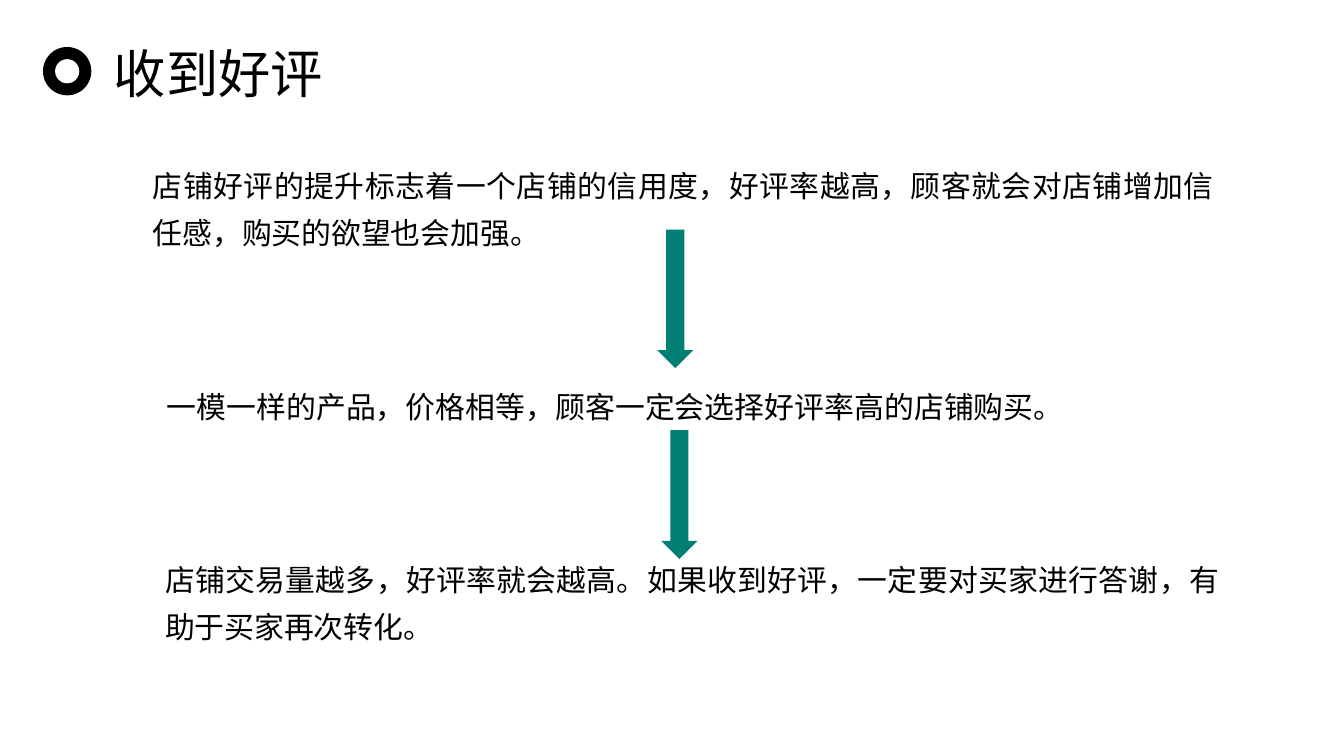
from dataclasses import dataclass

import pptx
import pptx.dml.color
import pptx.enum.shapes
import pptx.enum.text
import pptx.oxml.ns
import pptx.util
from lxml import etree

Inches = pptx.util.Inches
RGBColor = pptx.dml.color.RGBColor
MSO_SHAPE = pptx.enum.shapes.MSO_SHAPE
PP_ALIGN = pptx.enum.text.PP_ALIGN

BLACK = RGBColor(0x00, 0x00, 0x00)
WHITE = RGBColor(0xFF, 0xFF, 0xFF)
TEAL = RGBColor(0x00, 0x80, 0x75)
FONT = "Noto Sans CJK SC"
SLIDE_W = 10
SLIDE_H = SLIDE_W * 9 / 16


@dataclass
class Box:
    x: float
    y: float
    w: float
    h: float

    def lengths(self) -> list:
        return [Inches(v) for v in (self.x, self.y, self.w, self.h)]


@dataclass
class Statement:
    box: Box
    text: str


STATEMENTS = [
    Statement(Box(1.04, 1.12, 8.1, 0.8),
              "店铺好评的提升标志着一个店铺的信用度，好评率越高，顾客就会对店铺增加信任感，购买的欲望也会加强。"),
    Statement(Box(1.14, 2.76, 6.66, 0.45),
              "一模一样的产品，价格相等，顾客一定会选择好评率高的店铺购买。"),
    Statement(Box(1.13, 4.05, 8.05, 0.8),
              "店铺交易量越多，好评率就会越高。如果收到好评，一定要对买家进行答谢，有助于买家再次转化。"),
]
ARROWS = [Box(4.89, 1.71, 0.27, 1.03), Box(4.92, 3.2, 0.27, 0.96)]
RINGS = [(Box(0.32, 0.35, 0.36, 0.36), BLACK), (Box(0.41, 0.44, 0.18, 0.18), WHITE)]


def add_text(s, box: Box, text: str, *, size: float, wrap: bool = True,
             align=PP_ALIGN.LEFT, spacing: float = 1.0) -> None:
    tf = s.shapes.add_textbox(*box.lengths()).text_frame
    tf.word_wrap = wrap
    tf.auto_size = pptx.enum.text.MSO_AUTO_SIZE.SHAPE_TO_FIT_TEXT
    p = tf.paragraphs[0]
    p.alignment = align
    p.line_spacing = spacing
    r = p.add_run()
    r.text = text
    r.font.size = pptx.util.Pt(size)
    r.font.name = FONT
    r.font.color.rgb = BLACK
    # Chinese glyphs take the East Asian typeface
    ea = etree.SubElement(r.font._element, pptx.oxml.ns.qn("a:ea"))
    ea.set("typeface", FONT)


def add_solid(shapes, kind, box: Box, color: RGBColor) -> None:
    sp = shapes.add_shape(kind, *box.lengths())
    sp.shadow.inherit = False
    sp.fill.solid()
    sp.fill.fore_color.rgb = color
    sp.line.fill.background()


def main() -> None:
    prs = pptx.Presentation()
    prs.slide_width, prs.slide_height = Inches(SLIDE_W), Inches(SLIDE_H)
    s = prs.slides.add_slide(prs.slide_layouts[6])

    # Title with its ring marker
    marker = s.shapes.add_group_shape()
    for box, color in RINGS:
        add_solid(marker.shapes, MSO_SHAPE.OVAL, box, color)
    add_text(s, Box(0.75, 0.26, 1.76, 0.57), "收到好评", size=28, wrap=False)

    # Statements
    for item in STATEMENTS:
        add_text(s, item.box, item.text, size=16, align=PP_ALIGN.JUSTIFY, spacing=1.3)

    # Arrows between the statements
    for box in ARROWS:
        add_solid(s.shapes, MSO_SHAPE.DOWN_ARROW, box, TEAL)

    prs.save("out.pptx")


if __name__ == "__main__":
    main()
